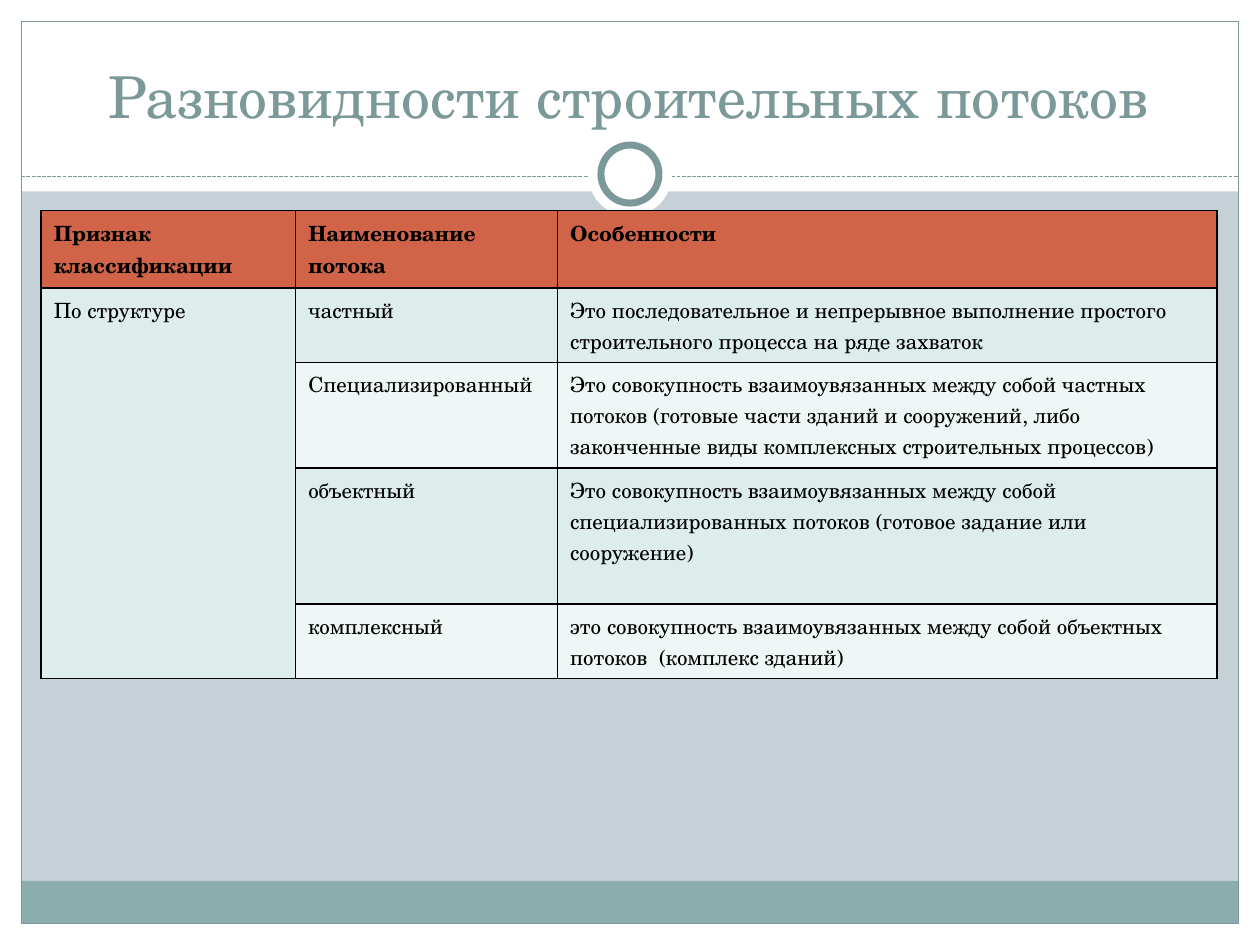
from dataclasses import dataclass

from lxml.etree import SubElement
from pptx import Presentation
from pptx.dml.color import RGBColor
from pptx.enum.dml import MSO_LINE
from pptx.enum.shapes import MSO_CONNECTOR, MSO_SHAPE
from pptx.enum.text import MSO_ANCHOR, PP_ALIGN
from pptx.oxml.ns import qn
from pptx.util import Cm, Pt

TITLE = "Разновидности строительных потоков"
HEADER = ("Признак классификации", "Наименование  потока", "Особенности")
CRITERION = "По структуре"
FLOWS = [
    ("частный",
     "Это последовательное и непрерывное выполнение простого строительного "
     "процесса на ряде захваток"),
    ("Специализированный",
     "Это совокупность взаимоувязанных между собой частных потоков (готовые "
     "части зданий и сооружений, либо законченные виды комплексных "
     "строительных процессов)"),
    ("объектный",
     "Это совокупность взаимоувязанных между собой специализированных потоков "
     "(готовое задание или сооружение)"),
    ("комплексный",
     "это совокупность взаимоувязанных между собой объектных потоков  "
     "(комплекс зданий)"),
]


@dataclass(frozen=True)
class Theme:
    font: str = "TeX Gyre Schola"
    title_size: float = 33
    table_size: float = 12
    background: str = "C5D1D7"
    paper: str = "FFFFFF"
    accent: str = "7C999A"
    footer: str = "8CADAE"
    header: str = "D16349"
    bands: tuple = ("DDEDEC", "EFF6F6")
    ink: str = "000000"


THEME = Theme()
WIDTH, HEIGHT = 25.4, 19.05
MARGIN = 0.43
INNER_WIDTH = WIDTH - 2 * MARGIN
TOP_BAND = 3.86
FOOTER_TOP = 17.76
RULE_Y = 3.56
RING_Y = 3.51
TABLE_LEFT, TABLE_TOP = 0.83, 4.24
COLUMN_WIDTHS = (5.13, 5.28, 13.29)
ROW_HEIGHTS = (1.57, 1.5, 2.12, 2.74, 1.5)


def color(value):
    return RGBColor.from_string(value)


def add_panel(slide, box, fill=None, line=None, line_width=0.75,
              kind=MSO_SHAPE.RECTANGLE):
    panel = slide.shapes.add_shape(kind, *map(Cm, box))
    panel.shadow.inherit = False
    if fill:
        panel.fill.solid()
        panel.fill.fore_color.rgb = color(fill)
    else:
        panel.fill.background()
    if line:
        panel.line.color.rgb = color(line)
        panel.line.width = Pt(line_width)
    else:
        panel.line.fill.background()


def add_circle(slide, diameter, **style):
    """Add a circle centred on the ring's place on the rule."""
    box = ((WIDTH - diameter) / 2, RING_Y - diameter / 2, diameter, diameter)
    add_panel(slide, box, THEME.paper, kind=MSO_SHAPE.OVAL, **style)


def add_frame(slide):
    for box in [
        (0, HEIGHT - MARGIN, WIDTH, MARGIN),
        (0, 0, WIDTH, TOP_BAND),
        (0, 0, MARGIN, HEIGHT),
        (WIDTH - MARGIN, 0, MARGIN, HEIGHT),
    ]:
        add_panel(slide, box, THEME.paper)
    bottom = HEIGHT - MARGIN
    add_panel(slide, (MARGIN, FOOTER_TOP, INNER_WIDTH, bottom - FOOTER_TOP),
              THEME.footer)
    add_panel(slide, (MARGIN, MARGIN, INNER_WIDTH, HEIGHT - 2 * MARGIN),
              line=THEME.accent)
    rule = slide.shapes.add_connector(
        MSO_CONNECTOR.STRAIGHT, Cm(MARGIN), Cm(RULE_Y),
        Cm(WIDTH - MARGIN), Cm(RULE_Y))
    rule.line.color.rgb = color(THEME.accent)
    rule.line.width = Pt(0.75)
    rule.line.dash_style = MSO_LINE.SQUARE_DOT
    SubElement(rule.element.spPr, qn("a:effectLst"))
    add_circle(slide, 1.7)
    add_circle(slide, 1.17, line=THEME.accent, line_width=4)


def format_text(frame, size, ink, bold=False):
    for para in frame.paragraphs:
        for span in para.runs:
            span.font.name = THEME.font
            span.font.size = Pt(size)
            span.font.bold = bold
            span.font.color.rgb = color(ink)


def place_title(slide):
    title = slide.shapes.title
    title.left, title.top = Cm(TABLE_LEFT), Cm(0.64)
    title.width, title.height = Cm(sum(COLUMN_WIDTHS)), Cm(2.11)
    frame = title.text_frame
    frame.text = TITLE
    frame.vertical_anchor = MSO_ANCHOR.BOTTOM
    frame.paragraphs[0].alignment = PP_ALIGN.CENTER
    format_text(frame, THEME.title_size, THEME.accent)
    slide.shapes.element.append(title.element)  # above the white band


def add_borders(cell):
    properties = cell._tc.get_or_add_tcPr()
    for position, side in enumerate(("lnL", "lnR", "lnT", "lnB")):
        border = SubElement(properties, qn(f"a:{side}"), w=str(Pt(1)))
        fill = SubElement(border, qn("a:solidFill"))
        SubElement(fill, qn("a:srgbClr"), val=THEME.ink)
        properties.insert(position, border)  # borders precede the fill


def add_flow_table(slide):
    rows = [HEADER] + [(CRITERION if i == 0 else "", *flow)
                       for i, flow in enumerate(FLOWS)]
    table = slide.shapes.add_table(
        len(rows), len(HEADER), Cm(TABLE_LEFT), Cm(TABLE_TOP),
        Cm(sum(COLUMN_WIDTHS)), Cm(sum(ROW_HEIGHTS))).table
    table.first_row = table.horz_banding = False
    for column, width in zip(table.columns, COLUMN_WIDTHS):
        column.width = Cm(width)
    for r, (texts, height) in enumerate(zip(rows, ROW_HEIGHTS)):
        table.rows[r].height = Cm(height)
        for c, text in enumerate(texts):
            cell = table.cell(r, c)
            cell.text = text
            cell.fill.solid()
            fill = THEME.bands[(r - 1) % 2] if r else THEME.header
            cell.fill.fore_color.rgb = color(fill)
            format_text(cell.text_frame, THEME.table_size, THEME.ink, r == 0)
            add_borders(cell)
    table.cell(1, 0).merge(table.cell(len(FLOWS), 0))


def main():
    deck = Presentation()
    deck.slide_width, deck.slide_height = Cm(WIDTH), Cm(HEIGHT)
    slide = deck.slides.add_slide(deck.slide_layouts.get_by_name("Title Only"))
    slide.background.fill.solid()
    slide.background.fill.fore_color.rgb = color(THEME.background)
    add_frame(slide)
    place_title(slide)
    add_flow_table(slide)
    deck.save("out.pptx")


if __name__ == "__main__":
    main()
